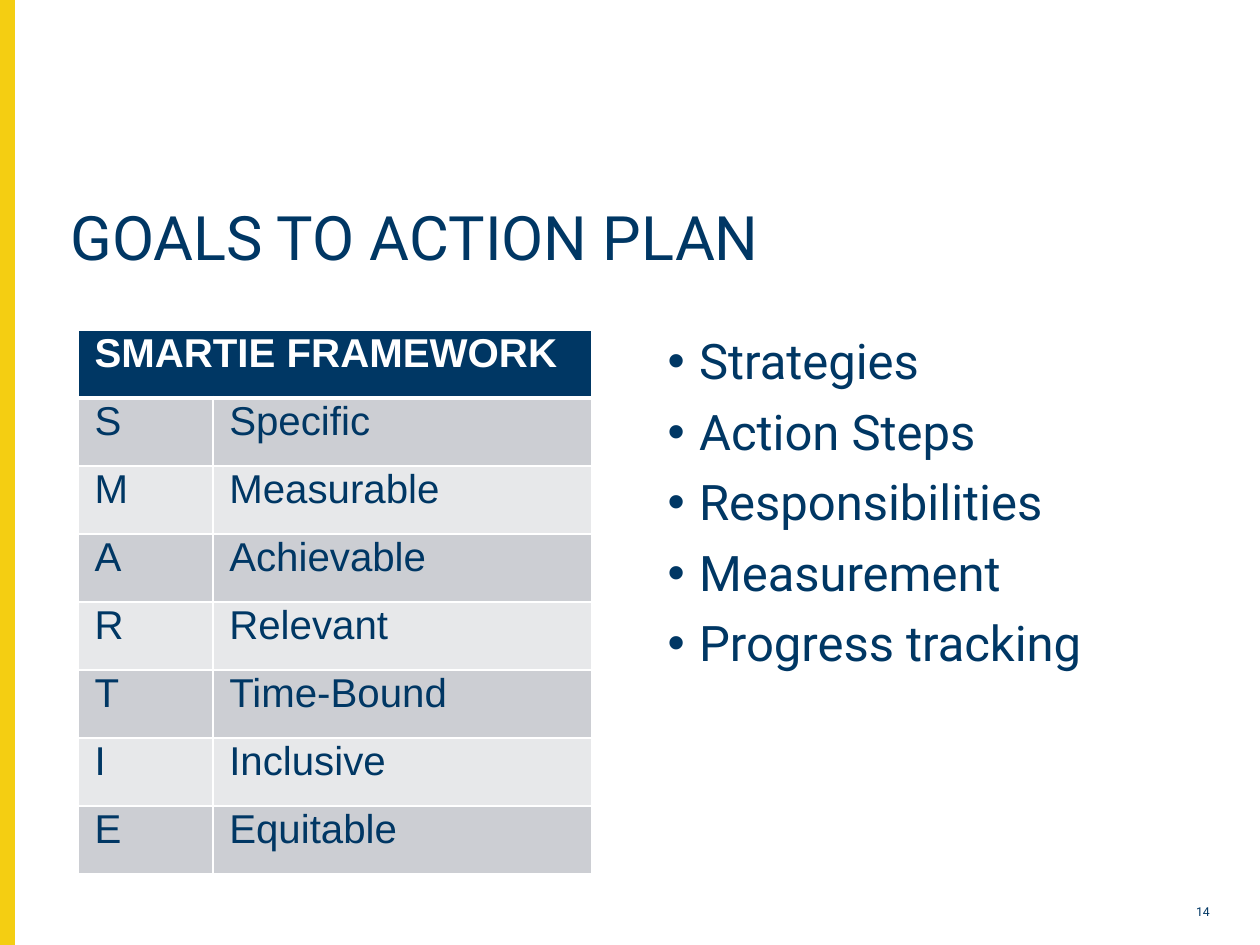
from lxml import etree
from pptx import Presentation
from pptx.dml.color import RGBColor
from pptx.enum.shapes import MSO_SHAPE
from pptx.enum.text import MSO_ANCHOR, PP_ALIGN
from pptx.oxml.ns import qn
from pptx.util import Inches, Pt

RECTANGLE = MSO_SHAPE.RECTANGLE
TOP, MIDDLE = MSO_ANCHOR.TOP, MSO_ANCHOR.MIDDLE
LEFT, RIGHT = PP_ALIGN.LEFT, PP_ALIGN.RIGHT

NAVY, YELLOW, WHITE = "003764", "F4CE12", "FFFFFF"
BANDS = ("CCCED3", "E7E8EA")
HEADING = "SMARTIE FRAMEWORK"
FRAMEWORK = ("Specific", "Measurable", "Achievable", "Relevant",
             "Time-Bound", "Inclusive", "Equitable")
STEPS = ("Strategies", "Action Steps", "Responsibilities",
         "Measurement", "Progress tracking")


def colour(value):
    return RGBColor.from_string(value)


class PageBuilder:
    font = "Roboto"
    table_font = "Arial"

    def __init__(self, page):
        self.page = page

    def style(self, para, size, name, fill, bold=False):
        para.font.size = Pt(size)
        para.font.name = name
        para.font.bold = bold
        para.font.color.rgb = colour(fill)

    def bar(self, left, top, width, height, fill):
        bar = self.page.shapes.add_shape(
            RECTANGLE, Inches(left), Inches(top), Inches(width), Inches(height))
        bar.shadow.inherit = False
        bar.fill.solid()
        bar.fill.fore_color.rgb = colour(fill)
        bar.line.color.rgb = colour(fill)
        bar.line.width = Pt(1)

    def text(self, left, top, width, height, lines, size, anchor=TOP,
             align=LEFT, bullet=False, gap=0):
        box = self.page.shapes.add_textbox(
            Inches(left), Inches(top), Inches(width), Inches(height))
        frame = box.text_frame
        frame.word_wrap = True
        frame.vertical_anchor = anchor
        for index, line in enumerate(lines):
            para = frame.add_paragraph() if index else frame.paragraphs[0]
            para.text = line
            para.alignment = align
            para.line_spacing = 0.9
            if index:
                para.space_before = Pt(gap)
            if bullet:
                self.bullet(para)
            self.style(para, size, self.font, NAVY)

    def bullet(self, para):
        props = para._p.get_or_add_pPr()
        props.set("marL", str(Inches(0.25)))
        props.set("indent", str(-Inches(0.25)))
        etree.SubElement(props, qn("a:buFont"), typeface="Arial")
        etree.SubElement(props, qn("a:buChar"), char="•")

    def table(self, left, top, columns, row_height, heading, rows):
        count = len(rows) + 1
        table = self.page.shapes.add_table(
            count, len(columns), Inches(left), Inches(top),
            Inches(sum(columns)), Inches(row_height * count)).table
        for column, width in zip(table.columns, columns):
            column.width = Inches(width)
        for row in table.rows:
            row.height = Inches(row_height)

        # Heading across all columns
        for index in range(len(columns)):
            self.cell(table.cell(0, index), "" if index else heading,
                      NAVY, WHITE, bold=True, bottom=3)
        table.cell(0, 0).merge(table.cell(0, len(columns) - 1))

        # Banded rows
        for number, row in enumerate(rows, 1):
            band = BANDS[(number - 1) % 2]
            for index, words in enumerate(row):
                self.cell(table.cell(number, index), words, band, NAVY,
                          top=3 if number == 1 else 1)

    def cell(self, cell, words, fill, ink, bold=False, top=1, bottom=1):
        cell.margin_left = cell.margin_right = Inches(0.13)
        cell.margin_top = cell.margin_bottom = Inches(0.06)
        para = cell.text_frame.paragraphs[0]
        para.text = words
        para.line_spacing = Pt(21.8)
        self.style(para, 23, self.table_font, ink, bold)
        props = cell._tc.get_or_add_tcPr()
        for side, width in (("L", 1), ("R", 1), ("T", top), ("B", bottom)):
            line = etree.SubElement(props, qn(f"a:ln{side}"), w=str(Pt(width)))
            solid = etree.SubElement(line, qn("a:solidFill"))
            etree.SubElement(solid, qn("a:srgbClr"), val=WHITE)
        cell.fill.solid()
        cell.fill.fore_color.rgb = colour(fill)


def main():
    deck = Presentation()
    deck.slide_width, deck.slide_height = Inches(10), Inches(7.5)
    builder = PageBuilder(deck.slides.add_slide(deck.slide_layouts[6]))

    # Side bar and title
    builder.bar(0, 0, 0.11, 7.5, YELLOW)
    builder.text(0.46, 1.6, 9.33, 0.79, ["GOALS TO ACTION PLAN"], 35)

    # Framework table: each word follows its initial
    builder.table(0.62, 2.62, (1.07, 3.01), 0.54, HEADING,
                  [(word[0], word) for word in FRAMEWORK])

    # Action plan list
    builder.text(5.2, 2.63, 4.59, 4.34, STEPS, 28, bullet=True, gap=10)

    # Page number
    builder.text(9.2, 7.14, 0.5, 0.21, ["14"], 7, anchor=MIDDLE, align=RIGHT)

    deck.save("out.pptx")


if __name__ == "__main__":
    main()
